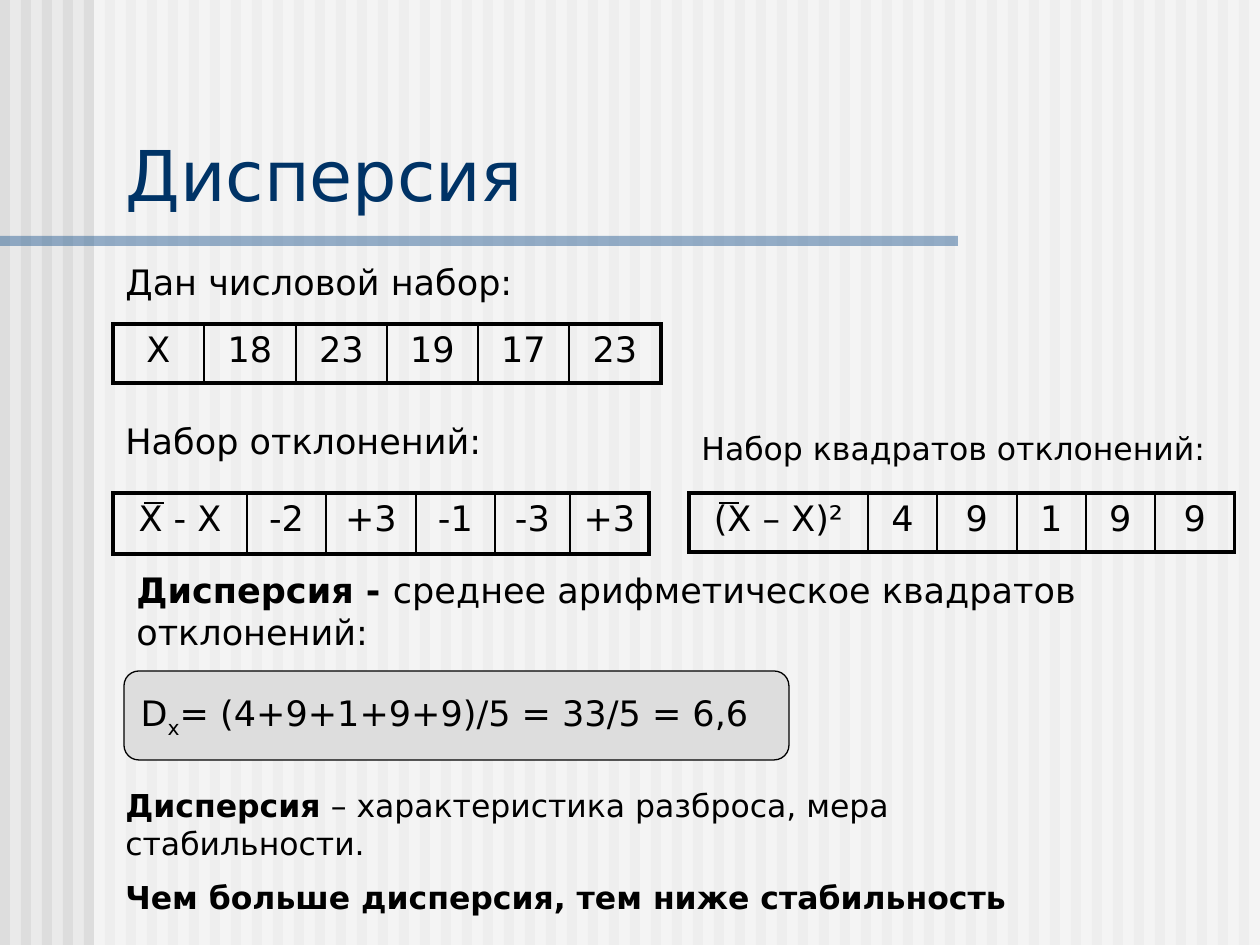
from dataclasses import dataclass

from lxml.etree import SubElement
from pptx import Presentation
from pptx.dml.color import RGBColor
from pptx.enum.shapes import MSO_CONNECTOR, MSO_SHAPE
from pptx.enum.text import MSO_ANCHOR, MSO_AUTO_SIZE, PP_ALIGN
from pptx.oxml.ns import qn
from pptx.util import Emu, Pt


@dataclass(frozen=True)
class Theme:
    font: str = "DejaVu Sans"
    ink: str = "000000"
    title: str = "003366"
    paper: str = "EAEAEA"
    stripe: str = "DDDDDD"
    veil: str = "FFFFFF"
    bar: str = "336699"
    title_size: int = 40
    body_size: int = 20
    note_size: int = 18
    thin: float = 0.75
    inner: float = 1
    outer: float = 2.25


T = Theme()
W, H = 1260, 945
LEFT = 113
RIGHT = 689


def px(n):
    return Emu(round(n * 914400 / 126))


def box(x, y, w, h):
    return px(x), px(y), px(w), px(h)


def rgb(value):
    return RGBColor.from_string(value)


def style(r, size, color=T.ink, bold=False):
    r.font.name = T.font
    r.font.size = Pt(size)
    r.font.bold = bold
    r.font.color.rgb = rgb(color)


def fill_paragraph(p, runs, size):
    """Write (text, bold) runs into a paragraph."""
    for text, bold in runs:
        r = p.add_run()
        r.text = text
        style(r, size, bold=bold)


def add_bar(shapes, x, w, color, y=0, h=H, alpha=None):
    """Add a borderless rectangle; alpha is opacity in percent."""
    sp = shapes.add_shape(MSO_SHAPE.RECTANGLE, *box(x, y, w, h))
    sp.shadow.inherit = False
    sp.line.fill.background()
    sp.fill.solid()
    sp.fill.fore_color.rgb = rgb(color)
    if alpha:
        clr = sp.element.spPr.find(qn("a:solidFill")).find(qn("a:srgbClr"))
        SubElement(clr, qn("a:alpha"), val=str(alpha * 1000))


def decorate_master(prs, s):
    """Put the paper, the stripes and the title bar on the slide master."""
    fill = prs.slide_master.background.fill
    fill.solid()
    fill.fore_color.rgb = rgb(T.paper)
    group = s.shapes.add_group_shape()
    for x in range(0, W, 21):
        add_bar(group.shapes, x, 10, T.stripe)
    add_bar(group.shapes, 94, W - 94, T.veil, alpha=50)
    add_bar(group.shapes, 0, 958, T.bar, y=236, h=10, alpha=50)
    for number, props in enumerate(group.element.iter(qn("p:cNvPr")), 100):
        props.set("id", str(number))
    prs.slide_master.shapes.element.insert(2, group.element)


def set_title(s, text):
    title = s.shapes.title
    title.left, title.top, title.width, title.height = box(LEFT, 125, 1125, 97)
    tf = title.text_frame
    tf.text = text
    tf.vertical_anchor = MSO_ANCHOR.BOTTOM
    tf.auto_size = MSO_AUTO_SIZE.NONE
    p = tf.paragraphs[0]
    p.alignment = PP_ALIGN.LEFT
    style(p.runs[0], T.title_size, T.title)


def add_text(s, x, y, w, h, paragraphs, size=T.body_size):
    tf = s.shapes.add_textbox(*box(x, y, w, h)).text_frame
    tf.word_wrap = True
    tf.auto_size = MSO_AUTO_SIZE.SHAPE_TO_FIT_TEXT
    for i, runs in enumerate(paragraphs):
        p = tf.add_paragraph() if i else tf.paragraphs[0]
        if i:
            p.space_before = Pt(size / 2)
        fill_paragraph(p, runs, size)


def add_border(cell, side, width):
    ln = SubElement(cell._tc.get_or_add_tcPr(), qn(f"a:ln{side}"), w=str(Pt(width)))
    SubElement(SubElement(ln, qn("a:solidFill")), qn("a:srgbClr"), val=T.ink)


def add_row_table(s, x, y, h, widths, values):
    """Add a one-row table with a heavy frame and thin dividers."""
    table = s.shapes.add_table(1, len(values), *box(x, y, sum(widths), h)).table
    table.first_row = table.horz_banding = False
    table.rows[0].height = px(h)
    last = len(values) - 1
    for i, (width, value) in enumerate(zip(widths, values)):
        table.columns[i].width = px(width)
        cell = table.cell(0, i)
        cell.text = value
        p = cell.text_frame.paragraphs[0]
        p.alignment = PP_ALIGN.CENTER
        style(p.runs[0], T.body_size)
        add_border(cell, "L", T.inner if i else T.outer)
        add_border(cell, "R", T.inner if i < last else T.outer)
        add_border(cell, "T", T.outer)
        add_border(cell, "B", T.outer)
        cell.fill.background()


def add_mean_bar(s, x, y):
    """Draw the overline that marks a mean."""
    line = s.shapes.add_connector(
        MSO_CONNECTOR.STRAIGHT, px(x), px(y), px(x + 20), px(y))
    line.line.color.rgb = rgb(T.ink)
    line.line.width = Pt(T.thin)
    SubElement(line.element.spPr, qn("a:effectLst"))


def add_formula(s, x, y, w, h, name, index, expression):
    sp = s.shapes.add_shape(MSO_SHAPE.ROUNDED_RECTANGLE, *box(x, y, w, h))
    sp.shadow.inherit = False
    sp.fill.solid()
    sp.fill.fore_color.rgb = rgb(T.stripe)
    sp.line.color.rgb = rgb(T.ink)
    sp.line.width = Pt(T.thin)
    tf = sp.text_frame
    tf.word_wrap = False
    tf.vertical_anchor = MSO_ANCHOR.MIDDLE
    p = tf.paragraphs[0]
    p.alignment = PP_ALIGN.LEFT
    fill_paragraph(p, [(t, False) for t in (name, index, expression)], T.body_size)
    p.runs[1].font._element.set("baseline", "-25000")


def main():
    prs = Presentation()
    prs.slide_width, prs.slide_height = px(W), px(H)
    s = prs.slides.add_slide(prs.slide_layouts[5])
    decorate_master(prs, s)
    set_title(s, "Дисперсия")

    add_row_table(s, LEFT, 324, 59, [91, 92, 91, 91, 91, 92],
                  ["X", "18", "23", "19", "17", "23"])
    add_row_table(s, LEFT, 493, 61, [134, 79, 90, 79, 75, 79],
                  ["X - X", "-2", "+3", "-1", "-3", "+3"])
    add_formula(s, 124, 671, 665, 89, "D", "x", "= (4+9+1+9+9)/5 = 33/5 = 6,6")
    add_text(s, 124, 562, 987, 97, [
        [("Дисперсия - ", True),
         ("среднее арифметическое квадратов отклонений:", False)]])
    add_text(s, LEFT, 780, 955, 145, [
        [("Дисперсия", True),
         (" – характеристика разброса, мера стабильности.", False)],
        [("Чем больше дисперсия, тем ниже стабильность", True)]], T.note_size)
    add_mean_bar(s, 144, 503)
    add_row_table(s, RIGHT, 493, 59, [179, 69, 80, 69, 69, 80],
                  ["(X – X)²", "4", "9", "1", "9", "9"])
    add_mean_bar(s, 719, 503)
    add_text(s, LEFT, 413, 462, 54, [[("Набор отклонений:", False)]])
    add_text(s, RIGHT, 423, 546, 50,
             [[("Набор квадратов отклонений:", False)]], T.note_size)
    add_text(s, LEFT, 254, 462, 54, [[("Дан числовой набор:", False)]])
    prs.save("out.pptx")


if __name__ == "__main__":
    main()
